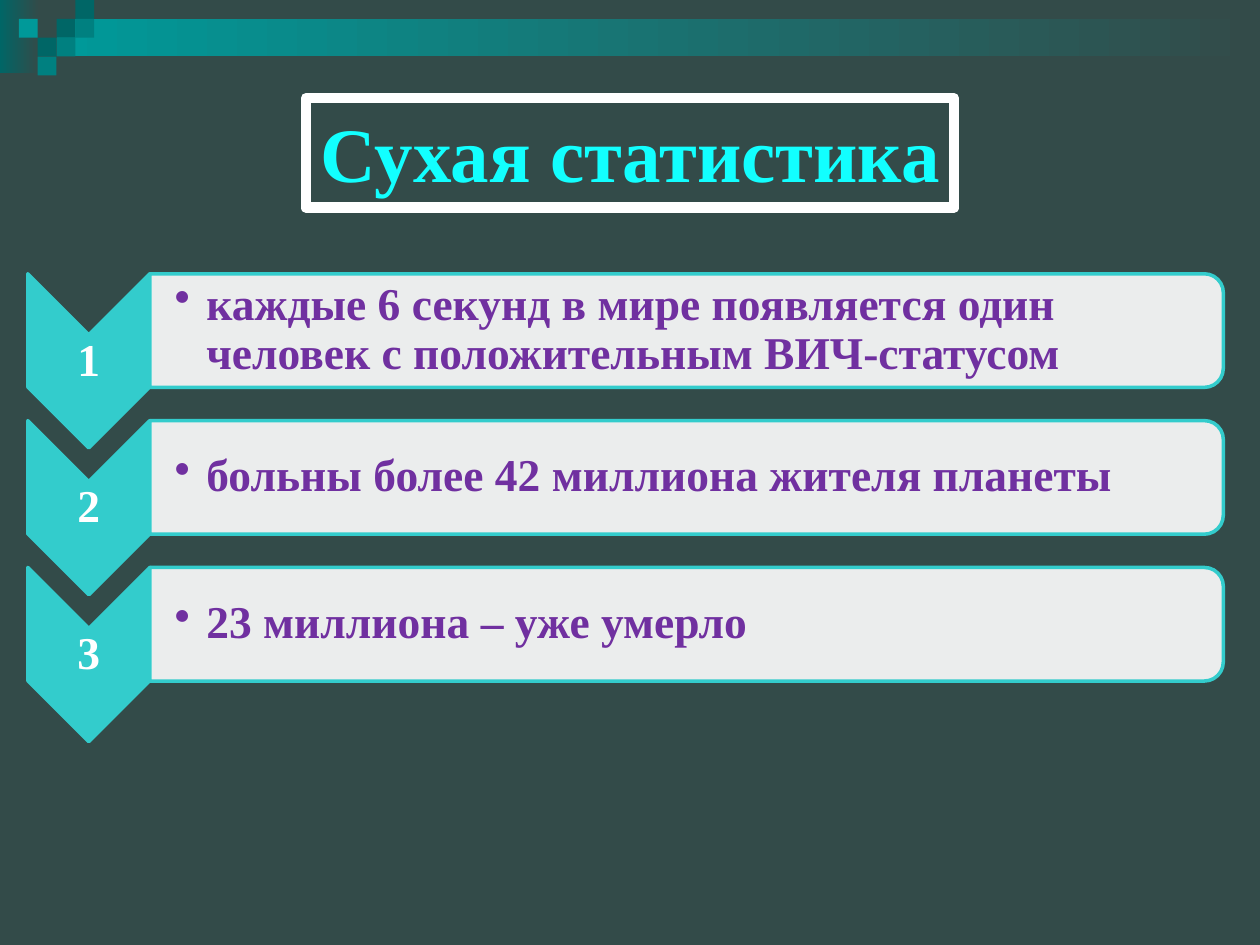
import pptx
import pptx.util
import pptx.dml.color
import pptx.enum.dml
import pptx.enum.shapes
import pptx.enum.text
import pptx.oxml
import pptx.oxml.ns
from lxml import etree
from dataclasses import dataclass

Cm = pptx.util.Cm
Pt = pptx.util.Pt
RGB = pptx.dml.color.RGBColor.from_string
SHAPE = pptx.enum.shapes.MSO_SHAPE
ALIGN = pptx.enum.text.PP_ALIGN
ANCHOR = pptx.enum.text.MSO_ANCHOR
qn = pptx.oxml.ns.qn


@dataclass
class Theme:
    font: str = "Times New Roman"
    title_size: int = 44
    body_size: int = 26
    background: str = "334B49"
    dark_teal: str = "006666"
    mid_teal: str = "008080"
    teal: str = "009999"
    accent: str = "33CCCC"
    white: str = "FFFFFF"
    title: str = "12FFFF"
    fact: str = "7030A0"


theme = Theme()


def add_block(kind, left, top, width, height, fill=None, fade_to=None, alpha=None,
              line=None, line_width=2, rotation=0):
    """Add a preset shape; lengths are in cm, before rotation."""
    block = slide.shapes.add_shape(kind, Cm(left), Cm(top), Cm(width), Cm(height))
    block.shadow.inherit = False
    block.rotation = rotation
    if fade_to:
        block.fill.gradient()
        block.fill.gradient_angle = 0
        for stop, color in zip(block.fill.gradient_stops, (fill, fade_to)):
            stop.color.rgb = RGB(color)
    elif fill:
        block.fill.solid()
        block.fill.fore_color.rgb = RGB(fill)
        if alpha:
            color_xml = block.fill._xPr.find(qn("a:solidFill"))[0]
            etree.SubElement(color_xml, qn("a:alpha"), val=str(alpha * 1000))
    else:
        block.fill.background()
    if line:
        block.line.color.rgb = RGB(line)
        block.line.width = Pt(line_width)
        etree.SubElement(block.line._get_or_add_ln(), qn("a:round"))
    else:
        block.line.fill.background()
    return block


def write(holder, text, color, size, align=ALIGN.LEFT, anchor=ANCHOR.MIDDLE,
          insets=(0.05, 0.05, 0.05, 0.05), spacing=0.9, bullet=None):
    """Put one bold paragraph into a text holder; insets are in cm."""
    frame = holder.text_frame
    frame.word_wrap = True
    frame.auto_size = pptx.enum.text.MSO_AUTO_SIZE.NONE
    frame.vertical_anchor = anchor
    (frame.margin_left, frame.margin_top,
     frame.margin_right, frame.margin_bottom) = map(Cm, insets)
    paragraph = frame.paragraphs[0]
    paragraph.alignment = align
    paragraph.line_spacing = spacing
    run = paragraph.add_run()
    run.text = text
    run.font.name = theme.font
    run.font.size = Pt(size)
    run.font.bold = True
    run.font.color.rgb = RGB(color)
    if bullet:
        properties = paragraph._p.get_or_add_pPr()
        hang = Cm(0.64)
        properties.set("marL", str(hang))
        properties.set("indent", str(-hang))
        etree.SubElement(properties, qn("a:buChar"), char=bullet)


deck = pptx.Presentation()
deck.slide_width, deck.slide_height = Cm(25.4), Cm(19.05)
slide = deck.slides.add_slide(deck.slide_layouts[5])
slide.background.fill.solid()
slide.background.fill.fore_color.rgb = RGB(theme.background)

# Fading bands along the top
add_block(SHAPE.RECTANGLE, 0, 0, 0.79, 1.47, theme.dark_teal, fade_to=theme.background)
add_block(SHAPE.RECTANGLE, 1.14, 0.38, 24.26, 0.76, theme.teal, fade_to=theme.background)

# Corner mosaic: column, row and colour of each tile
tile = 0.38
mosaic = [(3, 1, theme.dark_teal), (4, 0, theme.dark_teal), (4, 1, theme.mid_teal),
          (2, 2, theme.dark_teal), (1, 1, theme.teal), (3, 2, theme.mid_teal),
          (2, 3, theme.mid_teal)]
for column, row, color in mosaic:
    add_block(SHAPE.RECTANGLE, column * tile, row * tile, tile, tile, color)

# Numbered facts
facts = ["каждые 6 секунд в мире появляется один человек с положительным ВИЧ-статусом",
         "больны более 42 миллиона жителя планеты",
         "23 миллиона – уже умерло"]
first_top, step = 5.52, 2.96
chevron_left, chevron_width, chevron_height = 0.56, 2.46, 3.51
bar_left, bar_width, bar_height = 3.02, 21.64, 2.29
for index, fact in enumerate(facts):
    top = first_top + index * step

    # Both shapes are turned by 90°, so width and height swap about the centre
    chevron_shift = (chevron_height - chevron_width) / 2
    add_block(SHAPE.CHEVRON, chevron_left - chevron_shift, top + chevron_shift,
              chevron_height, chevron_width, theme.accent, line=theme.accent, rotation=90)
    number = slide.shapes.add_textbox(Cm(chevron_left), Cm(top + 1.23),
                                      Cm(chevron_width), Cm(1.07))
    write(number, str(index + 1), theme.white, theme.body_size, align=ALIGN.CENTER)

    bar_shift = (bar_width - bar_height) / 2
    add_block(SHAPE.ROUND_2_SAME_RECTANGLE, bar_left + bar_shift, top - bar_shift,
              bar_height, bar_width, theme.white, alpha=90, line=theme.accent, rotation=90)
    statement = slide.shapes.add_textbox(Cm(bar_left), Cm(top + 0.11), Cm(21.51), Cm(2.06))
    write(statement, fact, theme.fact, theme.body_size,
          insets=(0.5, 0.05, 0.05, 0.05), bullet="•")

# Framed title
add_block(SHAPE.RECTANGLE, 6.17, 1.98, 13.06, 2.21, line=theme.white, line_width=6)
heading = slide.shapes.title
heading.left, heading.top, heading.width, heading.height = Cm(6.22), Cm(2), Cm(13.13), Cm(2.13)
write(heading, "Сухая статистика", theme.title, theme.title_size, anchor=ANCHOR.TOP,
      insets=(0.25, 0.13, 0.25, 0.13), spacing=1.0)
slide.shapes._spTree.append(heading._element)

deck.save("out.pptx")
